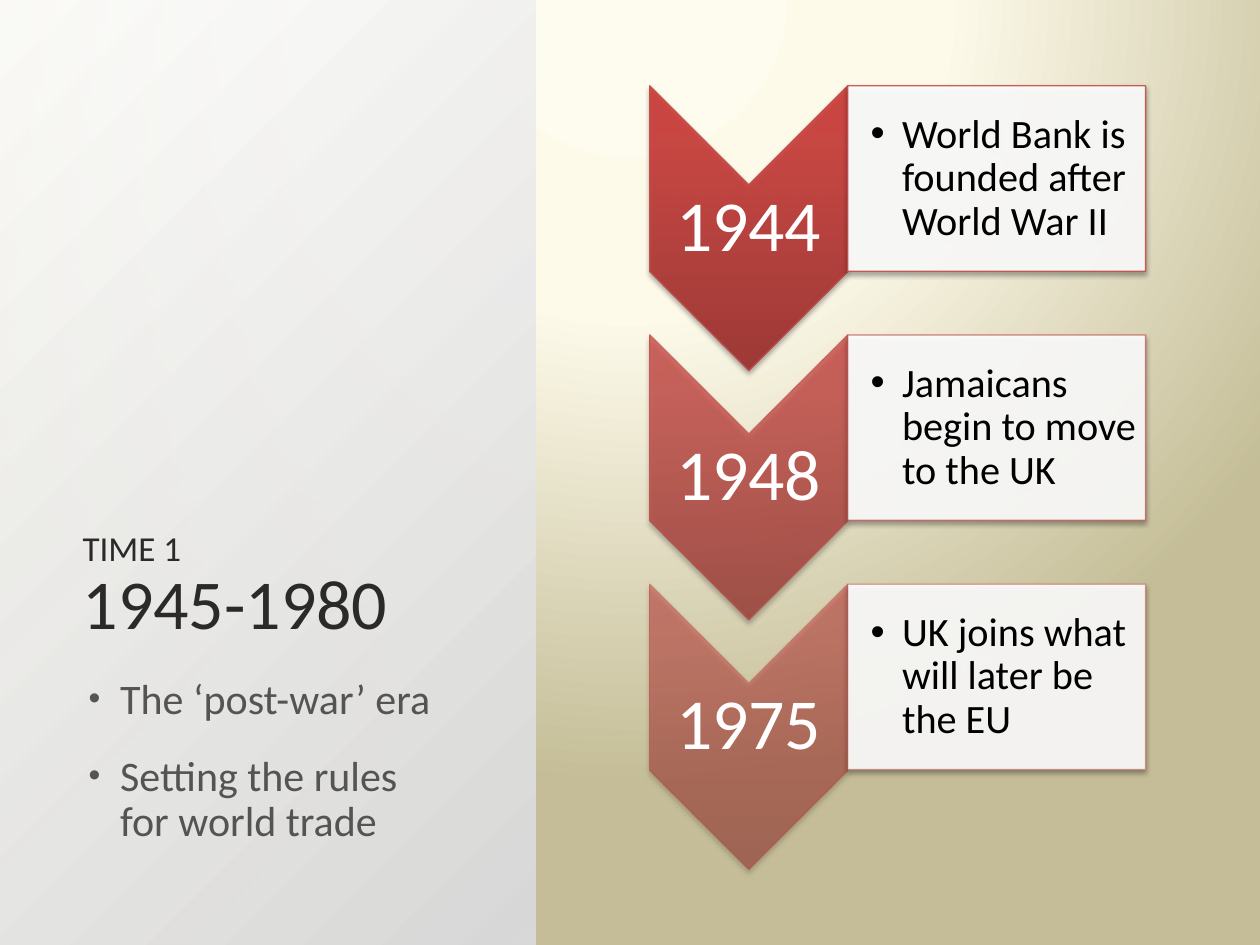
import pptx
import pptx.util
import pptx.dml.color
import pptx.enum.shapes
import pptx.enum.text
import pptx.oxml
import pptx.oxml.ns

Pt = pptx.util.Pt
RGBColor = pptx.dml.color.RGBColor
Shape = pptx.enum.shapes.MSO_SHAPE
Anchor = pptx.enum.text.MSO_ANCHOR
Align = pptx.enum.text.PP_ALIGN
qn = pptx.oxml.ns.qn

FONT = "Calibri"
BLACK = RGBColor(0x00, 0x00, 0x00)
WHITE = RGBColor(0xFF, 0xFF, 0xFF)
TITLE_INK = RGBColor(0x2A, 0x2A, 0x2A)
BODY_INK = RGBColor(0x54, 0x54, 0x54)
SILVER = RGBColor(0xD9, 0xD9, 0xD9)
IVORY = RGBColor(0xFE, 0xFC, 0xEE)
CREAM = RGBColor(0xFD, 0xFA, 0xEA)
KHAKI = RGBColor(0xC4, 0xBD, 0x97)
RED_DARK = RGBColor(0x9C, 0x2F, 0x2D)
RED = RGBColor(0xCB, 0x3E, 0x3A)
RED_BRIGHT = RGBColor(0xCE, 0x3B, 0x37)
RED_EDGE = RGBColor(0xC0, 0x50, 0x4D)

EVENTS = [
    ("1944", "World Bank is founded after World War II", 90),
    ("1948", "Jamaicans begin to move to the UK", 70),
    ("1975", "UK joins what will later be the EU", 50),
]


def add_xml(parent, text):
    """Append a drawing element written in the a: namespace."""
    head, rest = text.split(" ", 1)
    child = pptx.oxml.parse_xml(f"{head} {pptx.oxml.ns.nsdecls('a')} {rest}")
    parent.append(child)
    return child


def set_opacity(fill_parent, percent):
    color = fill_parent.find(qn("a:solidFill"))[0]
    add_xml(color, f'<a:alpha val="{percent * 1000}"/>')


def set_gradient(fill_parent, stops, direction):
    """Swap a solid fill for a gradient; stops are (position, colour, opacity)."""
    marks = "".join(
        f'<a:gs pos="{place * 1000}"><a:srgbClr val="{color}">'
        f'<a:alpha val="{opacity * 1000}"/></a:srgbClr></a:gs>'
        for place, color, opacity in stops)
    solid = fill_parent.find(qn("a:solidFill"))
    gradient = add_xml(fill_parent, '<a:gradFill rotWithShape="0">'
                       f"<a:gsLst>{marks}</a:gsLst>{direction}</a:gradFill>")
    fill_parent.replace(solid, gradient)


def circle(left, top, right, bottom):
    return (f'<a:path path="circle"><a:fillToRect l="{left * 1000}" t="{top * 1000}" '
            f'r="{right * 1000}" b="{bottom * 1000}"/></a:path>')


def add_block(page, kind, box, color):
    block = page.shapes.add_shape(kind, *map(Pt, box))
    block.shadow.inherit = False
    block.fill.solid()
    block.fill.fore_color.rgb = color
    block.line.fill.background()
    return block


def outline_and_shade(block, opacity):
    block.line.color.rgb = RED_EDGE
    block.line.width = Pt(0.75)
    properties = block._element.spPr
    set_opacity(properties.find(qn("a:ln")), opacity)
    add_xml(properties.find(qn("a:effectLst")),
            f'<a:outerShdw blurRad="{Pt(3.1)}" dist="{Pt(1.8)}" dir="5400000" '
            f'rotWithShape="0"><a:srgbClr val="{BLACK}"><a:alpha val="35000"/>'
            "</a:srgbClr></a:outerShdw>")


def prepare_frame(holder, anchor, margins):
    frame = holder.text_frame
    frame.word_wrap = True
    frame.auto_size = pptx.enum.text.MSO_AUTO_SIZE.NONE
    frame.vertical_anchor = anchor
    (frame.margin_left, frame.margin_top,
     frame.margin_right, frame.margin_bottom) = map(Pt, margins)
    return frame


def format_para(para, size, color, align=Align.LEFT):
    para.font.name = FONT
    para.font.size = Pt(size)
    para.font.color.rgb = color
    para.alignment = align
    para.line_spacing = 0.9


def set_bullet(para, indent, percent=100):
    properties = para._p.get_or_add_pPr()
    properties.set("marL", str(Pt(indent)))
    properties.set("indent", str(Pt(-18)))
    marks = [f'<a:buSzPct val="{percent * 1000}"/>',
             '<a:buFont typeface="Arial"/>', '<a:buChar char="•"/>']
    default_font = properties.find(qn("a:defRPr"))
    for mark in marks:
        child = add_xml(properties, mark)
        if default_font is not None:
            default_font.addprevious(child)


def build_background(page):
    page.background.fill.solid()
    page.background.fill.fore_color.rgb = KHAKI
    properties = page._element.xpath(".//p:bgPr")[0]
    set_gradient(properties, [(0, IVORY, 100), (40, CREAM, 100), (100, KHAKI, 100)],
                 circle(50, -80, 50, 180))


def build_era_panel(page, left, top, width, height):
    # Pale side panel, behind the title
    panel = add_block(page, Shape.RECTANGLE, (left, top, width, height), SILVER)
    set_gradient(panel._element.spPr, [(0, SILVER, 100), (100, WHITE, 89)],
                 circle(100, 100, 0, 0))
    page.shapes._spTree.insert(2, panel._element)

    # Title in two sizes
    title = page.shapes.title
    title.left, title.top = Pt(left + 40), Pt(top + 54)
    title.width, title.height = Pt(width - 76), Pt(318)
    frame = prepare_frame(title, Anchor.BOTTOM, (7.2, 3.6, 7.2, 3.6))
    para = frame.paragraphs[0]
    format_para(para, 40, TITLE_INK)
    span = para.add_run()
    span.text = "TIME 1"
    span.font.size = Pt(20)
    para.add_line_break()
    para.add_run().text = "1945-1980"

    # Bulleted points
    points = page.shapes.add_textbox(Pt(left + 40), Pt(top + 384), Pt(width - 66), Pt(113))
    frame = prepare_frame(points, Anchor.TOP, (7.2, 3.6, 7.2, 3.6))
    frame.text = "The ‘post-war’ era\nSetting the rules\vfor world trade"
    for para in frame.paragraphs:
        format_para(para, 24, BODY_INK)
        para.space_before = Pt(18)
        set_bullet(para, 21.6, 80)


def build_event(page, box, year, event, opacity):
    left, top, width, height = box
    arrow_width, arrow_height, card_height = 113.2, height, 106

    # Downward chevron: a sideways one turned about its centre
    turned = (left + (arrow_width - arrow_height) / 2,
              top + (arrow_height - arrow_width) / 2, arrow_height, arrow_width)
    arrow = add_block(page, Shape.CHEVRON, turned, RED)
    arrow.rotation = 90
    set_gradient(arrow._element.spPr,
                 [(0, RED_DARK, opacity), (80, RED, opacity), (100, RED_BRIGHT, opacity)],
                 '<a:lin ang="16200000" scaled="0"/>')
    outline_and_shade(arrow, opacity)

    # Year, between the notch and the shoulders
    notch = arrow_width / 2
    label = page.shapes.add_textbox(Pt(left), Pt(top + notch), Pt(arrow_width),
                                    Pt(arrow_height - 2 * notch))
    frame = prepare_frame(label, Anchor.MIDDLE, (2, 2, 2, 2))
    frame.text = year
    format_para(frame.paragraphs[0], 41, WHITE, Align.CENTER)

    # Event card
    card = add_block(page, Shape.RECTANGLE,
                     (left + arrow_width, top, width - arrow_width, card_height), WHITE)
    set_opacity(card._element.spPr, 90)
    outline_and_shade(card, opacity)
    frame = prepare_frame(card, Anchor.MIDDLE, (13, 1.5, 1.5, 1.5))
    frame.text = event
    format_para(frame.paragraphs[0], 23, BLACK)
    set_bullet(frame.paragraphs[0], 18)


def build_timeline(page, left, top, width, pitch):
    for row, event in enumerate(EVENTS):
        build_event(page, (left, top + row * pitch, width, 162.8), *event)


def main():
    deck = pptx.Presentation()
    deck.slide_width, deck.slide_height = Pt(720), Pt(540)
    page = deck.slides.add_slide(deck.slide_layouts[5])
    build_background(page)
    build_era_panel(page, 0, 0, 306, 540)
    build_timeline(page, 371.3, 49, 283.4, 142.4)
    deck.save("out.pptx")


if __name__ == "__main__":
    main()
